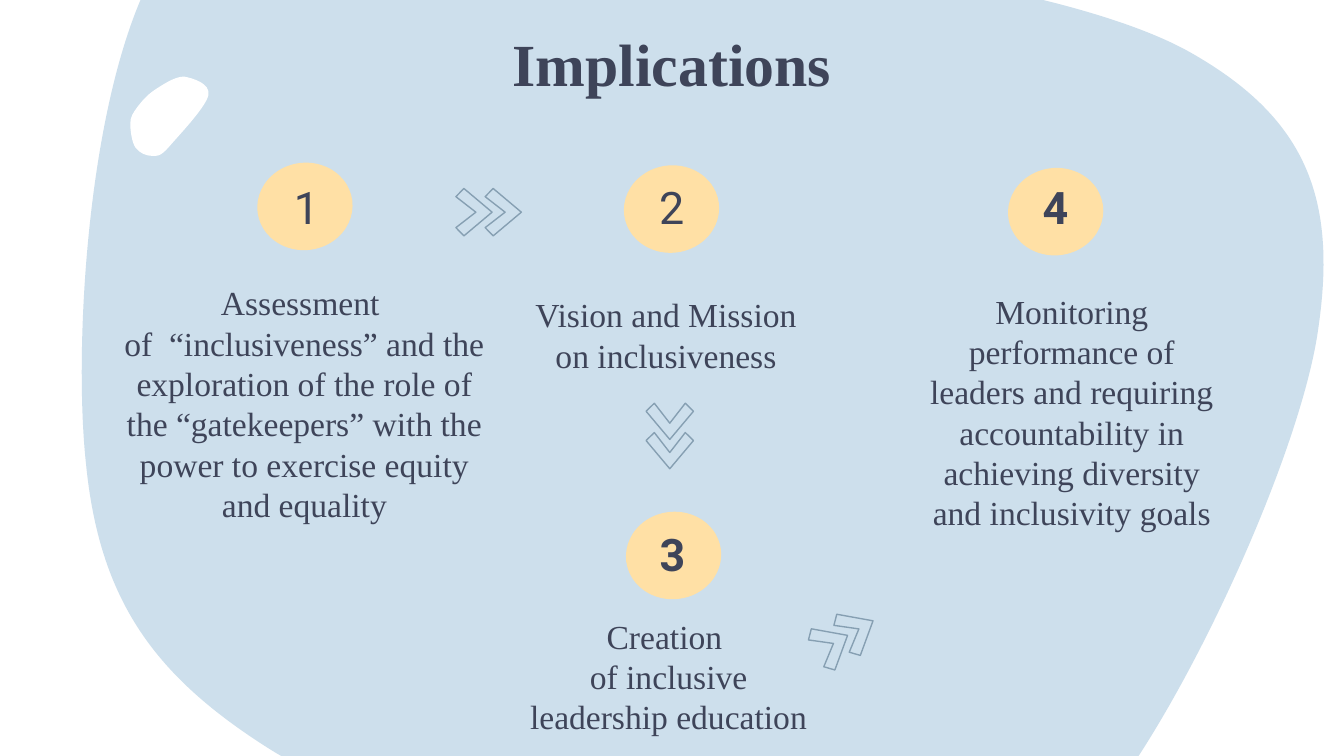
from math import cos, radians, sin
from lxml.etree import SubElement
from pptx import Presentation
from pptx.dml.color import RGBColor as RGB
from pptx.enum.shapes import MSO_SHAPE as SHAPE
from pptx.enum.text import MSO_ANCHOR as ANCHOR, PP_ALIGN as ALIGN
from pptx.oxml.ns import qn
from pptx.util import Pt

INK, SKY, SAND, STEEL, WHITE = "3E4459", "CDDFEC", "FFE0A5", "869FB2", "FFFFFF"
SERIF, SANS = "Times New Roman", "Roboto"

# Closed curves: a start point, then two handles and an end for each arc
BLOB = [
    (348.5, -33.8),
    (438.5, -23), (580.3, -5.8), (640.1, 29.5),
    (699.8, 64.1), (716.4, 106.6), (706.3, 175.7),
    (697, 244.8), (629.3, 391.7), (581, 443.5),
    (532.8, 494.6), (488.9, 489.6), (416.2, 483.1),
    (343.4, 475.9), (205.9, 439.9), (144, 401),
    (82.8, 362.2), (53.3, 321.8), (46.1, 248.4),
    (38.2, 175.7), (49.7, 8.6), (100.1, -38.9),
    (150.5, -85.7), (258.5, -45.4), (348.5, -33.8),
]
PEBBLE = [
    (90.7, 78.5),
    (95, 73.4), (110.2, 57.6), (111.6, 51.1),
    (113, 44.6), (103, 41.8), (98.6, 41),
    (93.6, 41), (87.1, 45.4), (82.8, 48.2),
    (78.5, 51.1), (75.6, 54.7), (73.4, 57.6),
    (71.3, 60.5), (69.8, 62.6), (69.8, 66.2),
    (69.8, 69.8), (70.6, 76.3), (72.7, 79.2),
    (74.9, 82.1), (78.5, 83.5), (81.4, 83.5),
    (84.2, 83.5), (85.7, 84.2), (90.7, 78.5),
]
# Chevron outline around its own centre, pointing right
CHEVRON = [(-5.4, -12.7), (-9.7, -8.3), (1, 0), (-9.7, 8.3), (-5.4, 12.7), (9.7, 0)]

# Number, bold, badge corner, digit corner, body box, body paragraphs
STEPS = [
    ("1", False, (137.8, 87.2), (136.8, 88.3), (56.2, 144, 213.8, 148.3),
     ["Assessment ",
      "of  “inclusiveness” and the exploration of the role of the "
      "“gatekeepers” with the power to exercise equity and equality"]),
    ("2", False, (334.2, 88.6), (332.6, 88.3), (272.2, 150.5, 169.2, 74.9),
     ["Vision and Mission on inclusiveness"]),
    ("3", True, (335.3, 274.2), (332.9, 274), (273.6, 322.6, 169.2, 74.9),
     ["Creation ", "of inclusive leadership education"]),
    ("4", True, (540, 90), (538.1, 88.3), (489.6, 148.5, 169.2, 152.6),
     ["Monitoring performance of leaders and requiring accountability in "
      "achieving diversity and inclusivity goals"]),
]
# Centre and angle of each pair of chevrons
PAIRS = [(261.8, 113.7, 0), (358.8, 233.6, 90), (452.5, 341.3, -29.8)]


def tint(hue):
    return RGB.from_string(hue)


def paint(shape, fill=None, line=None):
    shape.shadow.inherit = False
    if fill:
        shape.fill.solid()
        shape.fill.fore_color.rgb = tint(fill)
    else:
        shape.fill.background()
    if line:
        shape.line.color.rgb = tint(line)
        shape.line.width = Pt(0.75)
    else:
        shape.line.fill.background()


def write(slide, box, paras, size=18, font=SERIF, bold=False, anchor=ANCHOR.TOP):
    frame = slide.shapes.add_textbox(*map(Pt, box)).text_frame
    frame.word_wrap = True
    frame.vertical_anchor = anchor
    frame.margin_left = frame.margin_right = Pt(7.2)
    frame.margin_top = frame.margin_bottom = Pt(7.2)
    for i, text in enumerate(paras):
        para = frame.add_paragraph() if i else frame.paragraphs[0]
        para.alignment = ALIGN.CENTER
        run = para.add_run()
        run.text = text
        run.font.size = Pt(size)
        run.font.name = font
        run.font.bold = bold
        run.font.color.rgb = tint(INK)


def spin(x, y, angle):
    turn = radians(angle)
    return x * cos(turn) - y * sin(turn), x * sin(turn) + y * cos(turn)


def trace(slide, dots, fill=None, line=None):
    dots = [(Pt(x), Pt(y)) for x, y in dots]
    pen = slide.shapes.build_freeform(*dots[0], scale=1.0)
    pen.add_line_segments(dots[1:], close=True)
    shape = pen.convert_to_shape()
    paint(shape, fill, line)
    return shape


def curve(slide, dots, angle, fill):
    """A closed chain of cubic arcs, held in a box turned by angle."""
    shape = trace(slide, [spin(x, y, -angle) for x, y in dots], fill=fill)
    # Put the turned box where its centre belongs
    wide, high = shape.width, shape.height
    x, y = spin(shape.left + wide / 2, shape.top + high / 2, angle)
    shape.left, shape.top = int(x - wide / 2), int(y - high / 2)
    shape.rotation = angle
    # Join every three segments into one arc
    lines = list(shape.element.iter(qn("a:lnTo")))
    for i in range(0, len(dots) - 1, 3):
        trio = lines[i:i + 3]
        arc = SubElement(trio[0].getparent(), qn("a:cubicBezTo"))
        trio[0].addprevious(arc)
        for seg in trio:
            arc.append(seg[0])
            seg.getparent().remove(seg)


def backdrop(slide):
    curve(slide, BLOB, 10.7, SKY)
    curve(slide, PEBBLE, 220.1, WHITE)


def step(slide, num, bold, badge, digit, body, paras):
    # Badge with its number
    disc = slide.shapes.add_shape(SHAPE.OVAL, *map(Pt, (*badge, 51.1, 46.8)))
    disc.rotation = 352.7
    paint(disc, fill=SAND)
    write(slide, (*digit, 54.7, 44.6), [num], size=24, font=SANS, bold=bold,
          anchor=ANCHOR.MIDDLE)
    # Description
    write(slide, body, paras)


def arrow(slide, x, y, angle):
    # Two chevrons, one behind the other along the direction of travel
    for shift in (-7.85, 7.85):
        dx, dy = spin(shift, 0, angle)
        mark = trace(slide, [(x + dx + a, y + dy + b) for a, b in CHEVRON], line=STEEL)
        mark.rotation = angle


def main():
    deck = Presentation()
    deck.slide_width, deck.slide_height = Pt(720), Pt(405)
    slide = deck.slides.add_slide(deck.slide_layouts[6])
    backdrop(slide)
    write(slide, (56.5, 7.2, 607, 40.3), ["Implications"], size=32, bold=True)
    for item in STEPS:
        step(slide, *item)
    for pair in PAIRS:
        arrow(slide, *pair)
    deck.save("out.pptx")


if __name__ == "__main__":
    main()
